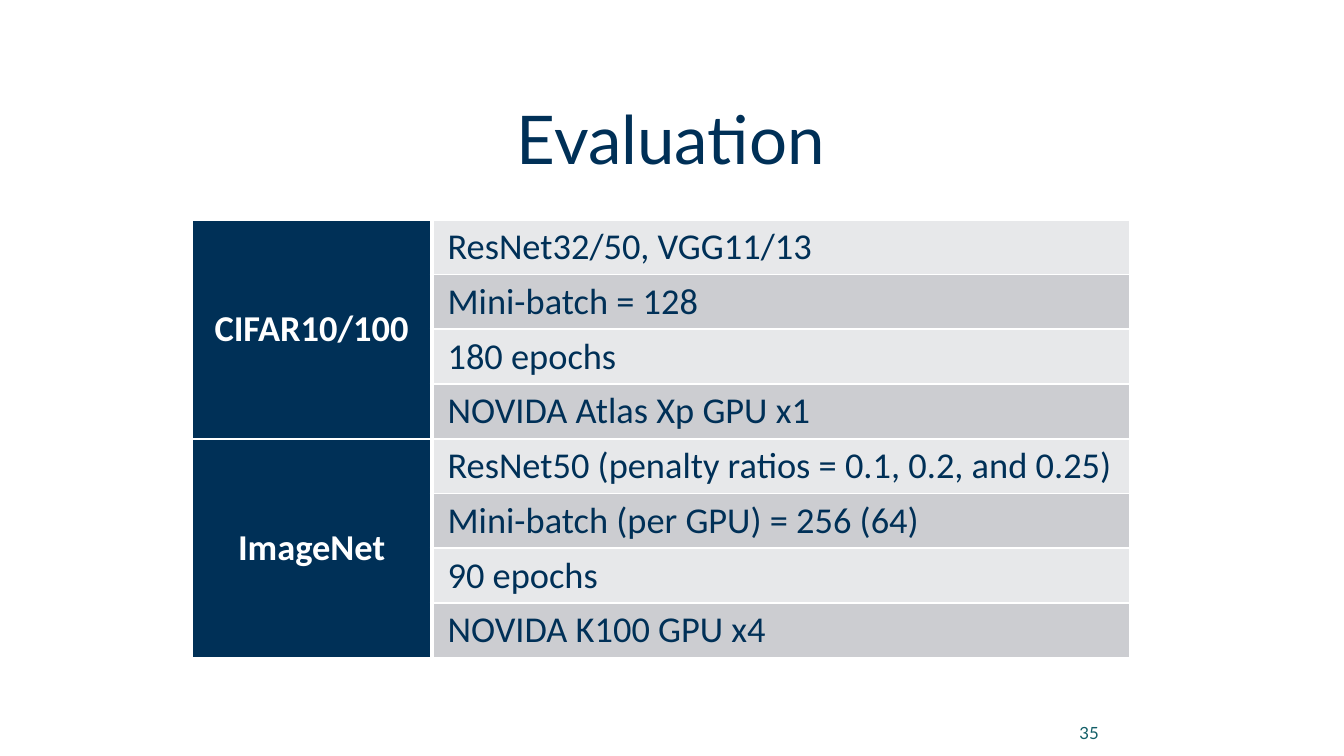
from lxml import etree
from pptx import Presentation
from pptx.dml.color import RGBColor
from pptx.enum import text
from pptx.oxml import ns
from pptx.util import Cm, Pt

NAVY = RGBColor(0x00, 0x30, 0x57)
TEAL = RGBColor(0x11, 0x5E, 0x67)
WHITE = RGBColor(0xFF, 0xFF, 0xFF)
BANDS = (RGBColor(0xE7, 0xE8, 0xEA), RGBColor(0xCC, 0xCD, 0xD1))

EXPERIMENTS = {
    "CIFAR10/100": [
        "ResNet32/50, VGG11/13",
        "Mini-batch = 128",
        "180 epochs",
        "NOVIDA Atlas Xp GPU x1",
    ],
    "ImageNet": [
        "ResNet50 (penalty ratios = 0.1, 0.2, and 0.25)",
        "Mini-batch (per GPU) = 256 (64)",
        "90 epochs",
        "NOVIDA K100 GPU x4",
    ],
}


def format_text(frame, font_name, size, color, align, bold=False):
    for para in frame.paragraphs:
        para.alignment = align
        for span in para.runs:
            span.font.name = font_name
            span.font.size = Pt(size)
            span.font.bold = bold
            span.font.color.rgb = color


def set_borders(cell, widths):
    properties = cell._tc.get_or_add_tcPr()
    for side, width in zip("LRTB", widths):
        line = etree.SubElement(properties, ns.qn(f"a:ln{side}"), w=str(Pt(width)))
        fill = etree.SubElement(line, ns.qn("a:solidFill"))
        etree.SubElement(fill, ns.qn("a:srgbClr"), val=str(WHITE))


def add_title(page, left, top, width, height):
    title = page.shapes.title
    title.left, title.top, title.width, title.height = left, top, width, height
    frame = title.text_frame
    frame.text = "Evaluation"
    frame.auto_size = text.MSO_AUTO_SIZE.NONE
    frame.vertical_anchor = text.MSO_ANCHOR.TOP
    frame.margin_top = frame.margin_bottom = Cm(0.25)
    format_text(frame, "Lato", 48, NAVY, text.PP_ALIGN.CENTER)


def add_page_number(page, left, top, width, height):
    frame = page.shapes.add_textbox(left, top, width, height).text_frame
    frame.word_wrap = True
    frame.vertical_anchor = text.MSO_ANCHOR.MIDDLE
    frame.text = "35"
    format_text(frame, "Lato", 12, TEAL, text.PP_ALIGN.RIGHT)


def fill_cell(cell, label, fill, color, align, bold):
    cell.text = label
    cell.vertical_anchor = text.MSO_ANCHOR.MIDDLE
    cell.fill.solid()
    cell.fill.fore_color.rgb = fill
    format_text(cell.text_frame, "Calibri", 26, color, align, bold)


def add_experiments(page, left, top, width, height):
    row_count = sum(len(settings) for settings in EXPERIMENTS.values())
    table = page.shapes.add_table(row_count, 2, left, top, width, height).table
    table.first_row = table.horz_banding = False
    table.columns[0].width = Cm(6.05)
    table.columns[1].width = width - Cm(6.05)

    for index in range(row_count):
        set_borders(table.cell(index, 0), (1.5, 3, 1.5, 1.5))
        set_borders(table.cell(index, 1), (3, 1.5, 1.5, 1.5))

    row = 0
    for dataset, settings in EXPERIMENTS.items():
        header = table.cell(row, 0)
        header.merge(table.cell(row + len(settings) - 1, 0))
        fill_cell(header, dataset, NAVY, WHITE, text.PP_ALIGN.CENTER, True)
        for setting in settings:
            cell = table.cell(row, 1)
            cell.margin_left = Cm(0.4)
            fill_cell(cell, setting, BANDS[row % 2], NAVY, text.PP_ALIGN.LEFT, False)
            row += 1


def build_evaluation(deck):
    page = deck.slides.add_slide(deck.slide_layouts[5])
    add_page_number(page, Cm(24.84), Cm(17.83), Cm(3.1), Cm(1.27))
    add_title(page, Cm(5.31), Cm(2.21), Cm(23.19), Cm(1.37))
    add_experiments(page, Cm(4.83), Cm(5.54), Cm(23.65), Cm(11.04))


def main():
    deck = Presentation()
    deck.slide_width, deck.slide_height = Cm(33.87), Cm(19.05)
    build_evaluation(deck)
    deck.save("out.pptx")


if __name__ == "__main__":
    main()
